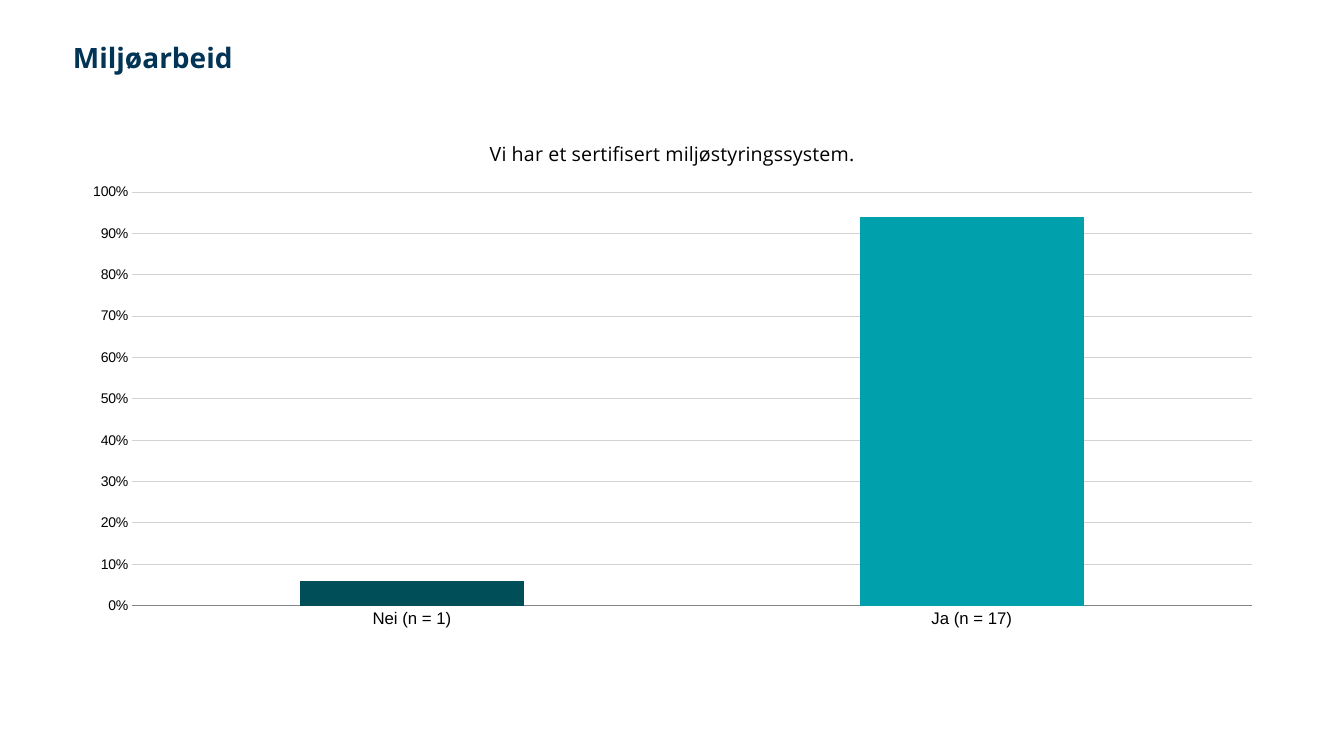
from dataclasses import dataclass

from pptx import Presentation
from pptx.chart.data import CategoryChartData
from pptx.dml.color import RGBColor
from pptx.enum.chart import XL_CHART_TYPE, XL_TICK_MARK
from pptx.util import Pt

COLUMNS = XL_CHART_TYPE.COLUMN_CLUSTERED
NO_TICKS = XL_TICK_MARK.NONE

HEADING = "Miljøarbeid"
QUESTION = "Vi har et sertifisert miljøstyringssystem."
ANSWERS = [("Nei (n = 1)", 0.06, "004E58"), ("Ja (n = 17)", 0.94, "00A1AD")]

PAGE_SIZE = (1344, 756)
HEADING_AREA = (63, 42, 1207, 39)
CHART_AREA = (69, 119, 1207, 519)


@dataclass(frozen=True)
class Theme:
    text_font: str = "Open Sans"
    chart_font: str = "Arial"
    navy: str = "013455"
    black: str = "000000"
    grid: str = "D3D3D3"
    axis: str = "868686"
    heading_size: int = 20
    question_size: int = 14
    category_size: int = 12
    value_size: int = 10
    chart_size: int = 18
    rule_width: float = 0.75


THEME = Theme()


def px(*lengths):
    return [round(length * 914400 / 100.8) for length in lengths]


def style_font(font, name, size, color, bold=False):
    font.name = name
    font.size = Pt(size)
    font.bold = bold
    font.color.rgb = RGBColor.from_string(color)


def style_line(line, color):
    line.width = Pt(THEME.rule_width)
    line.color.rgb = RGBColor.from_string(color)


def add_heading(page):
    frame = page.shapes.add_textbox(*px(*HEADING_AREA)).text_frame
    frame.word_wrap = True
    para = frame.paragraphs[0]
    para.text = HEADING
    para.line_spacing = 0.8
    style_font(para.font, THEME.text_font, THEME.heading_size, THEME.navy, True)


def style_axes(chart):
    categories, values = chart.category_axis, chart.value_axis
    for axis, size in ((categories, THEME.category_size), (values, THEME.value_size)):
        axis.major_tick_mark = axis.minor_tick_mark = NO_TICKS
        style_font(axis.tick_labels.font, THEME.chart_font, size, THEME.black)
    style_line(categories.format.line, THEME.axis)
    values.minimum_scale, values.maximum_scale = 0, 1
    values.major_unit = 0.1
    values.tick_labels.number_format = "0%"
    values.tick_labels.number_format_is_linked = False
    values.format.line.fill.background()
    style_line(values.major_gridlines.format.line, THEME.grid)


def add_answer_chart(page):
    labels, shares, colors = zip(*ANSWERS)
    data = CategoryChartData(number_format="0%")
    data.categories = labels
    data.add_series("Series 1", shares)
    chart = page.shapes.add_chart(COLUMNS, *px(*CHART_AREA), data).chart
    style_font(chart.font, THEME.chart_font, THEME.chart_size, THEME.black)
    chart.has_legend = False
    chart.has_title = True
    title = chart.chart_title
    title.include_in_layout = False
    para = title.text_frame.paragraphs[0]
    para.text = QUESTION
    style_font(para.font, THEME.text_font, THEME.question_size, THEME.black)
    style_axes(chart)

    plot = chart.plots[0]
    plot.gap_width = 150
    plot.vary_by_categories = False
    series = plot.series[0]
    for target, color in [(series, colors[0]), (series.points[1], colors[1])]:
        target.format.fill.solid()
        target.format.fill.fore_color.rgb = RGBColor.from_string(color)


def main():
    deck = Presentation()
    deck.slide_width, deck.slide_height = px(*PAGE_SIZE)
    page = deck.slides.add_slide(deck.slide_layouts[6])
    add_answer_chart(page)
    add_heading(page)
    deck.save("out.pptx")


if __name__ == "__main__":
    main()
